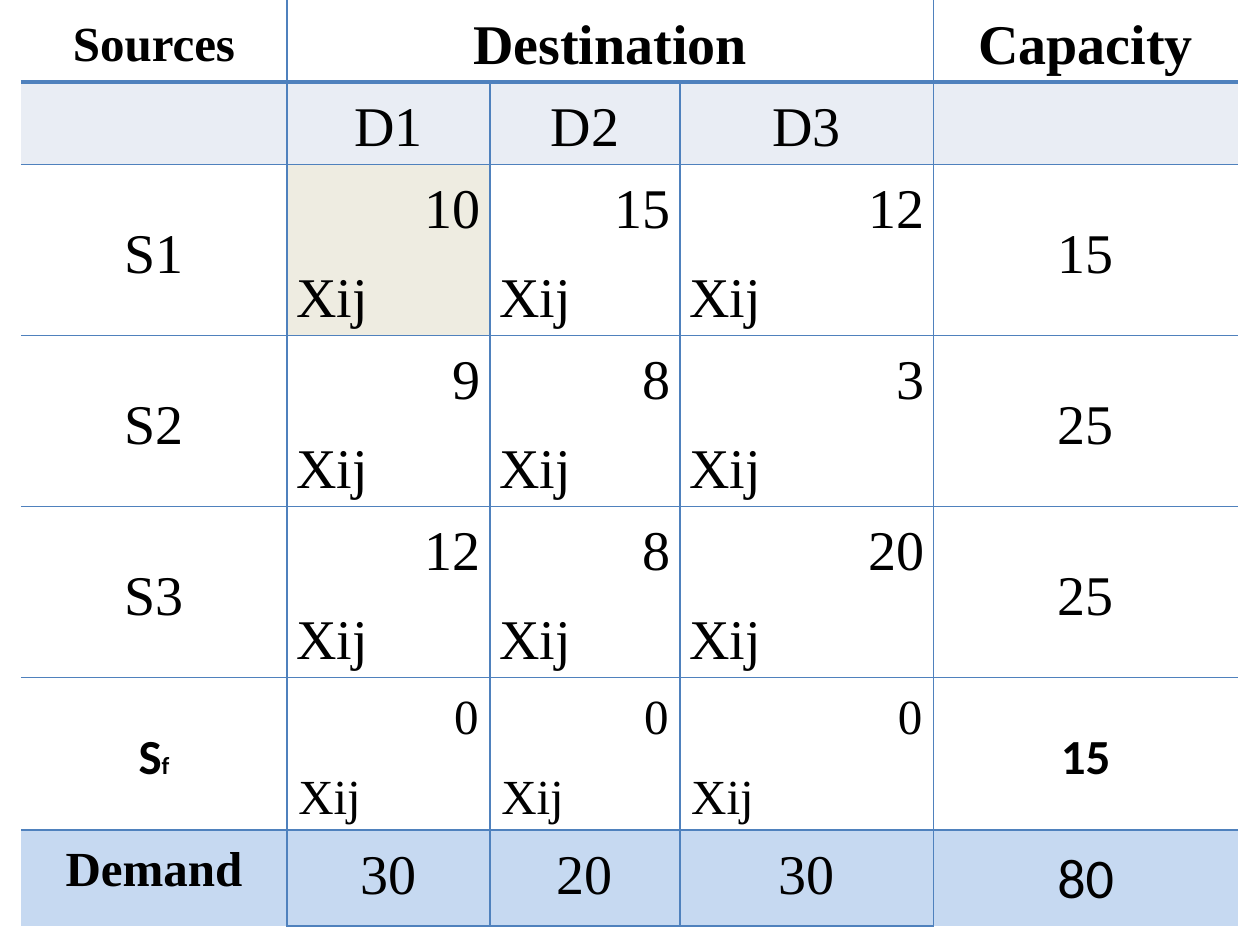
from dataclasses import dataclass
from typing import Optional

from lxml.etree import SubElement
from pptx import Presentation
from pptx.dml.color import RGBColor
from pptx.enum.text import MSO_ANCHOR, PP_ALIGN
from pptx.oxml.ns import qn
from pptx.util import Pt


@dataclass(frozen=True)
class Theme:
    serif: str = "Times New Roman"
    sans: str = "Calibri"
    large: float = 32
    medium: float = 28
    small: float = 14
    text: str = "000000"
    line: str = "4F81BD"
    white: str = "FFFFFF"
    band: str = "E9EDF4"
    selected: str = "EEECE1"
    total: str = "C6D9F1"
    thin: float = 1
    thick: float = 2.25


T = Theme()


@dataclass(frozen=True)
class Style:
    size: float = T.large
    font: str = T.serif
    bold: bool = False
    anchor: MSO_ANCHOR = MSO_ANCHOR.MIDDLE
    margin: float = 5.4


@dataclass(frozen=True)
class Row:
    height: float
    texts: tuple[str, ...]
    first: Style
    middle: Style
    last: Style
    fill: str = T.white
    costs: bool = False
    subscript: Optional[str] = None


# Cell styles
LABEL = Style()
HEAD = Style(bold=True)
SMALL_HEAD = Style(T.medium, bold=True)
COST = Style(anchor=MSO_ANCHOR.TOP)
DUMMY = Style(T.medium, T.sans, True, margin=6.5)
DUMMY_COST = Style(T.medium, margin=6.5)
DEMAND = Style(T.medium, bold=True, anchor=MSO_ANCHOR.TOP)
TOTAL = Style(font=T.sans, anchor=MSO_ANCHOR.TOP)


def source_row(*texts: str) -> Row:
    return Row(96, texts, LABEL, COST, LABEL, costs=True)


# Transportation table
WIDTHS = (152, 116, 108.5, 145, 174)
ROWS = (
    Row(44, ("Sources", "Destination", "", "", "Capacity"), SMALL_HEAD, HEAD, HEAD),
    Row(47, ("", "D1", "D2", "D3", ""), LABEL, LABEL, LABEL, T.band),
    source_row("S1", "10", "15", "12", "15"),
    source_row("S2", "9", "8", "3", "25"),
    source_row("S3", "12", "8", "20", "25"),
    Row(86.5, ("S", "0", "0", "0", "15"), DUMMY, DUMMY_COST, DUMMY,
        costs=True, subscript="f"),
    Row(55, ("Demand", "30", "20", "30", "80"), DEMAND, COST, TOTAL, T.total),
)
LAST_ROW, LAST_COL = len(ROWS) - 1, len(WIDTHS) - 1


def set_border(cell, tag: str, width: float) -> None:
    """Draw one cell edge; a width of zero hides it."""
    ln = SubElement(cell._tc.get_or_add_tcPr(), qn(tag), w=str(int(Pt(width))))
    if width:
        fill = SubElement(ln, qn("a:solidFill"))
        SubElement(fill, qn("a:srgbClr"), val=T.line)
    else:
        SubElement(ln, qn("a:noFill"))


def draw_borders(cell, i: int, j: int) -> None:
    inner = 0 < j < LAST_COL
    set_border(cell, "a:lnL", T.thin if j > 0 else 0)
    set_border(cell, "a:lnR", T.thin if j < LAST_COL else 0)
    set_border(cell, "a:lnT", (0, T.thick)[i] if i < 2 else T.thin)
    bottom = T.thin if i < LAST_ROW or inner else 0
    set_border(cell, "a:lnB", T.thick if i == 0 else bottom)


def format_paragraph(p, style: Style, align: PP_ALIGN) -> None:
    p.alignment = align
    p.line_spacing = 1.15
    p.space_after = Pt(10)
    for r in p.runs:
        r.font.name = style.font
        r.font.size = Pt(style.size)
        r.font.bold = style.bold
        r.font.color.rgb = RGBColor.from_string(T.text)


def fill_cell(cell, row: Row, i: int, j: int) -> None:
    style = row.first if j == 0 else row.last if j == LAST_COL else row.middle
    is_cost = row.costs and 0 < j < LAST_COL
    draw_borders(cell, i, j)
    cell.fill.solid()
    color = T.selected if (i, j) == (2, 1) else row.fill
    cell.fill.fore_color.rgb = RGBColor.from_string(color)
    cell.vertical_anchor = style.anchor
    cell.margin_left = cell.margin_right = Pt(style.margin)
    cell.margin_top = cell.margin_bottom = Pt(3)
    if not row.texts[j]:
        return

    tf = cell.text_frame
    p = tf.paragraphs[0]
    p.text = row.texts[j]
    format_paragraph(p, style, PP_ALIGN.RIGHT if is_cost else PP_ALIGN.CENTER)
    if is_cost:
        p = tf.add_paragraph()
        p.text = "Xij"
        format_paragraph(p, style, PP_ALIGN.LEFT)
    elif row.subscript and j == 0:
        r = p.add_run()
        r.text = row.subscript
        format_paragraph(p, style, PP_ALIGN.CENTER)
        r.font.size = Pt(T.small)


def main() -> None:
    prs = Presentation()
    prs.slide_width, prs.slide_height = Pt(720), Pt(540)
    s = prs.slides.add_slide(prs.slide_layouts[6])

    # Table grid
    table = s.shapes.add_table(
        len(ROWS), len(WIDTHS), Pt(12), Pt(0),
        Pt(sum(WIDTHS)), Pt(sum(row.height for row in ROWS))).table
    table.first_row = table.horz_banding = False
    for column, width in zip(table.columns, WIDTHS):
        column.width = Pt(width)

    # Cells
    for i, row in enumerate(ROWS):
        table.rows[i].height = Pt(row.height)
        for j in range(len(WIDTHS)):
            fill_cell(table.cell(i, j), row, i, j)
    table.cell(0, 1).merge(table.cell(0, 3))

    prs.save("out.pptx")


if __name__ == "__main__":
    main()
